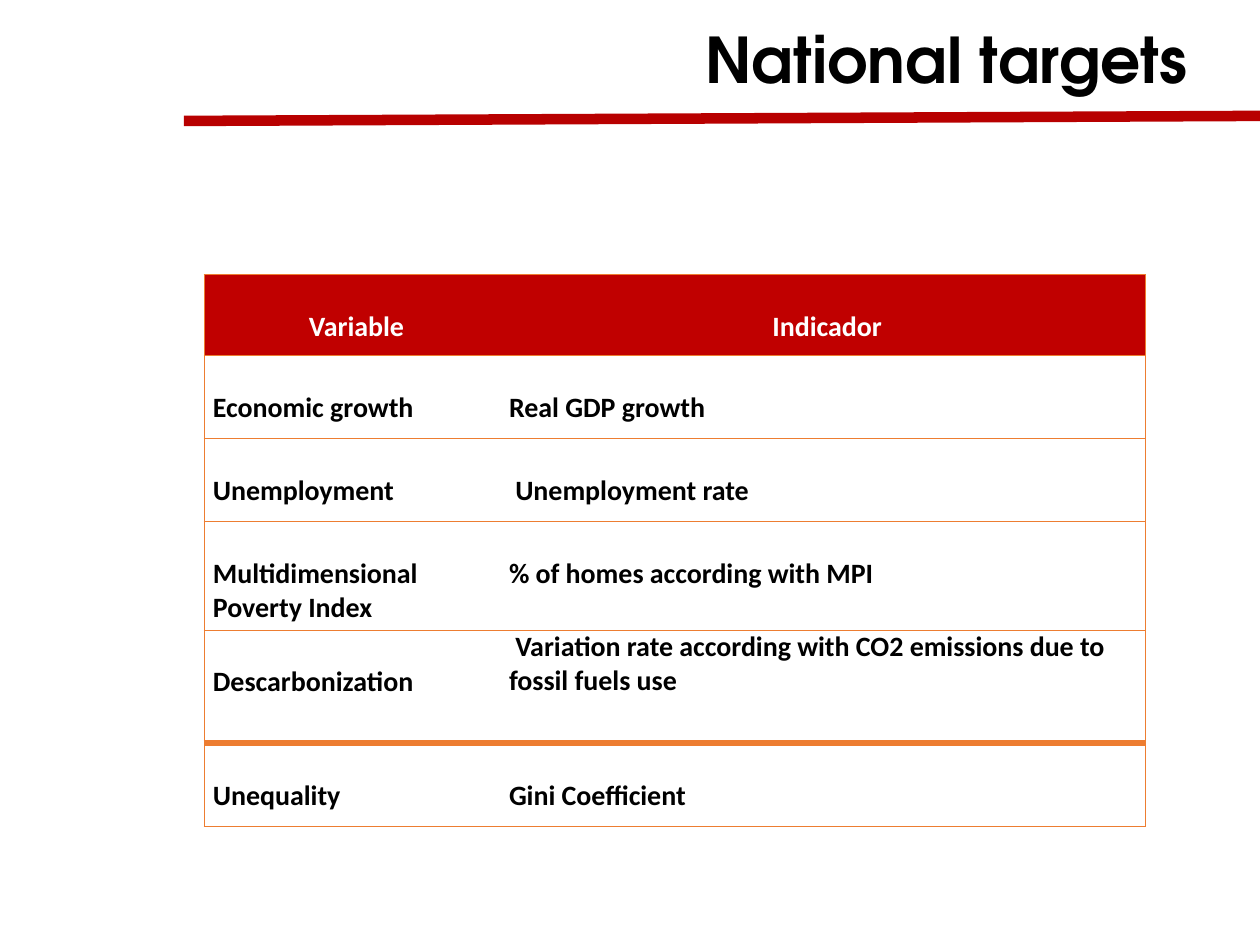
from dataclasses import dataclass

from lxml.etree import SubElement
from pptx import Presentation
from pptx.dml.color import RGBColor
from pptx.enum.shapes import MSO_CONNECTOR
from pptx.enum.text import MSO_ANCHOR, PP_ALIGN
from pptx.oxml.ns import qn
from pptx.util import Inches, Pt

RED = RGBColor(0xB8, 0x00, 0x00)
HEADER_RED = RGBColor(0xC0, 0x00, 0x00)
ORANGE = RGBColor(0xED, 0x7D, 0x31)
BLACK = RGBColor(0x00, 0x00, 0x00)
WHITE = RGBColor(0xFF, 0xFF, 0xFF)

COL_WIDTHS = (2.35, 5.12)
THIN, THICK = 0.5, 4
LINE_GAP = 0.28  # one empty text line above the wording
TAB_POS = 2.4


@dataclass
class Row:
    variable: str
    indicator: str
    height: float
    top: float = THIN
    bottom: float = THIN
    indicator_gap: float = LINE_GAP
    first_indent: float = 0
    merged: bool = False


ROWS = [
    Row("Variable", "Indicador", 0.64),
    Row("Economic growth", "Real GDP growth", 0.66),
    Row("Unemployment", "Unemployment rate", 0.66, merged=True),
    Row("Multidimensional Poverty Index", "% of homes according with MPI", 0.86),
    Row("Descarbonization",
        "Variation rate according with CO2 emissions due to fossil fuels use",
        0.9, bottom=THICK, indicator_gap=0, first_indent=0.05),
    Row("Unequality", "Gini Coefficient", 0.66, top=THICK),
]


def set_borders(cell, left: float, right: float, top: float, bottom: float) -> None:
    """Set the border widths in points; zero means no border."""
    tc_pr = cell._tc.get_or_add_tcPr()
    widths = (("a:lnL", left), ("a:lnR", right), ("a:lnT", top), ("a:lnB", bottom))
    for index, (tag, width) in enumerate(widths):
        ln = SubElement(tc_pr, qn(tag), w=str(Pt(width)))
        if width:
            fill = SubElement(ln, qn("a:solidFill"))
            SubElement(fill, qn("a:srgbClr"), val=str(ORANGE))
        else:
            SubElement(ln, qn("a:noFill"))
        tc_pr.insert(index, ln)  # borders come before the fill


def write_cell(cell, text: str, gap: float, header: bool) -> None:
    cell.margin_left = Inches(0.07)
    cell.margin_right = cell.margin_bottom = 0
    cell.margin_top = Inches(gap)
    cell.vertical_anchor = MSO_ANCHOR.TOP
    if header:
        cell.fill.solid()
        cell.fill.fore_color.rgb = HEADER_RED
    else:
        cell.fill.background()
    p = cell.text_frame.paragraphs[0]
    p.text = text
    p.alignment = PP_ALIGN.CENTER if header else PP_ALIGN.LEFT
    p.font.name = "Calibri"
    p.font.size = Pt(16)
    p.font.bold = True
    p.font.color.rgb = WHITE if header else BLACK


def add_targets_table(s) -> None:
    frame = s.shapes.add_table(
        len(ROWS), len(COL_WIDTHS), Inches(1.62), Inches(2.18),
        Inches(sum(COL_WIDTHS)), Inches(sum(row.height for row in ROWS)))
    table = frame.table
    table.first_row = table.horz_banding = False
    for column, width in zip(table.columns, COL_WIDTHS):
        column.width = Inches(width)

    for i, row in enumerate(ROWS):
        table.rows[i].height = Inches(row.height)
        first, second = table.cell(i, 0), table.cell(i, 1)
        if row.merged:
            first.merge(second)
            write_cell(first, f"{row.variable}\t{row.indicator}", LINE_GAP, False)
            p_pr = first.text_frame.paragraphs[0]._p.get_or_add_pPr()
            tabs = SubElement(p_pr, qn("a:tabLst"))
            SubElement(tabs, qn("a:tab"), pos=str(Inches(TAB_POS)), algn="l")
            p_pr.insert(0, tabs)
        else:
            write_cell(first, row.variable, LINE_GAP, i == 0)
            write_cell(second, row.indicator, row.indicator_gap, i == 0)
            if row.first_indent:
                p_pr = second.text_frame.paragraphs[0]._p.get_or_add_pPr()
                p_pr.set("marL", "0")
                p_pr.set("indent", str(Inches(row.first_indent)))
        set_borders(first, THIN, THIN if row.merged else 0, row.top, row.bottom)
        set_borders(second, 0, THIN, row.top, row.bottom)


def add_title(s) -> None:
    sp = s.shapes.add_textbox(Inches(5.5), 0, Inches(4.18), Inches(0.92))
    tf = sp.text_frame
    tf.word_wrap = True
    tf.vertical_anchor = MSO_ANCHOR.MIDDLE
    p = tf.paragraphs[0]
    p.text = "National targets"
    p.font.name = "TeX Gyre Adventor"
    p.font.size = Pt(36)
    p.font.bold = True
    p.font.color.rgb = BLACK


def add_title_rule(s) -> None:
    rule = s.shapes.add_connector(
        MSO_CONNECTOR.STRAIGHT, Inches(1.46), Inches(0.96), Inches(10), Inches(0.92))
    rule.line.color.rgb = RED
    rule.line.width = Pt(6)
    SubElement(rule._element.spPr, qn("a:effectLst"))


def main() -> None:
    prs = Presentation()
    prs.slide_width, prs.slide_height = Inches(10), Inches(7.5)
    s = prs.slides.add_slide(prs.slide_layouts[6])

    # Heading
    add_title_rule(s)
    add_title(s)

    # Variables and their indicators
    add_targets_table(s)

    prs.save("out.pptx")


if __name__ == "__main__":
    main()
